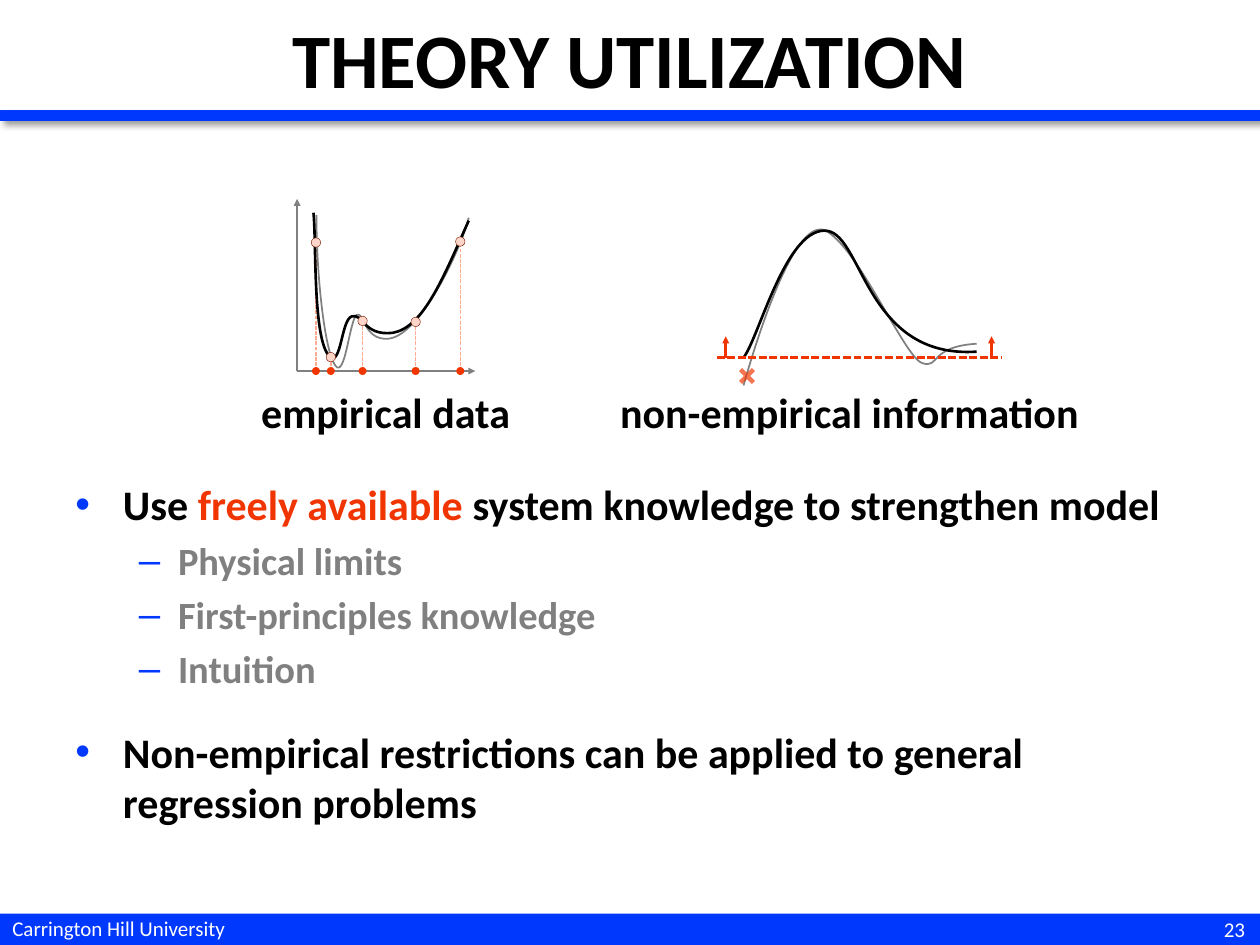
from dataclasses import dataclass
from pptx import Presentation
from pptx.dml.color import RGBColor as RGB
from pptx.enum.dml import MSO_LINE as DASH
from pptx.enum.shapes import MSO_CONNECTOR as CONN, MSO_SHAPE as SHAPE
from pptx.enum.text import MSO_ANCHOR as ANCHOR, PP_ALIGN as ALIGN
from pptx.oxml.ns import qn
from pptx.util import Cm, Pt
from lxml.etree import SubElement as Sub


@dataclass(frozen=True)
class Theme:
    font: str = "Calibri"
    blue: str = "0038FD"
    red: str = "F13500"
    salmon: str = "FFAB93"
    blush: str = "FFD5C9"
    brown: str = "781A00"
    gray: str = "808080"
    black: str = "000000"
    white: str = "FFFFFF"
    title: int = 44
    body: int = 24
    sub: int = 22
    footer: int = 12


def set_all(obj, values):
    for name, value in values.items():
        setattr(obj, name, value)


class SlideBuilder:
    def __init__(self, slide, theme):
        self.s, self.t = slide, theme
        self.shapes = slide.shapes

    def group(self):
        self.shapes = self.s.shapes.add_group_shape().shapes

    def ungroup(self):
        self.shapes = self.s.shapes

    def stroke(self, sp, color, width, dash=None):
        sp.line.color.rgb = RGB.from_string(color)
        set_all(sp.line, {"width": Pt(width), "dash_style": dash})

    def line(self, x1, y1, x2, y2, color, width, dash=None, arrow=False, shadow=False):
        sp = self.shapes.add_connector(CONN.STRAIGHT, Cm(x1), Cm(y1), Cm(x2), Cm(y2))
        self.stroke(sp, color, width, dash)
        if arrow:
            Sub(sp.line._get_or_add_ln(), qn("a:tailEnd"), type="triangle", w="sm", len="sm")
        effects = Sub(sp._element.spPr, qn("a:effectLst"))
        if shadow:
            outer = Sub(effects, qn("a:outerShdw"), blurRad=str(Pt(4)), dist=str(Pt(3)),
                        dir="2700000", algn="ctr", rotWithShape="0")
            black = Sub(outer, qn("a:srgbClr"), val=self.t.black)
            Sub(black, qn("a:alpha"), val="40000")

    def shape(self, kind, x, y, w, h, fill, border=None, alpha=None):
        sp = self.shapes.add_shape(kind, Cm(x), Cm(y), Cm(w), Cm(h))
        sp.shadow.inherit = False
        sp.fill.solid()
        sp.fill.fore_color.rgb = RGB.from_string(fill)
        if border:
            self.stroke(sp, border, 0.25)
        else:
            sp.line.fill.background()
        if alpha:
            color = sp._element.spPr.find(qn("a:solidFill"))[0]
            Sub(color, qn("a:alpha"), val=str(alpha * 1000))
        return sp

    def dot(self, cx, cy, d, fill, border=None):
        self.shape(SHAPE.OVAL, cx - d / 2, cy - d / 2, d, d, fill, border)

    def curve(self, points, color, width):
        start, *rest = [(Cm(x), Cm(y)) for x, y in points]
        fb = self.shapes.build_freeform(*start)
        fb.add_line_segments(rest, close=False)
        sp = fb.convert_to_shape()
        outline = next(sp._element.iter(qn("a:path")))
        segments = outline.findall(qn("a:lnTo"))
        for i in range(0, len(segments), 3):
            bezier = Sub(outline, qn("a:cubicBezTo"))
            for segment in segments[i:i + 3]:
                bezier.append(segment[0])
                outline.remove(segment)
        sp.shadow.inherit = False
        sp.fill.background()
        self.stroke(sp, color, width)

    def textbox(self, x, y, w, h, anchor=ANCHOR.TOP):
        tf = self.shapes.add_textbox(Cm(x), Cm(y), Cm(w), Cm(h)).text_frame
        set_all(tf, {"word_wrap": True, "vertical_anchor": anchor})
        return tf

    def runs(self, p, parts, size, bold=True):
        for text, color in parts:
            r = p.add_run()
            r.text = text
            set_all(r.font, {"name": self.t.font, "size": Pt(size), "bold": bold})
            r.font.color.rgb = RGB.from_string(color)

    def text(self, x, y, w, h, text, size, color, align=ALIGN.CENTER,
             bold=True, anchor=ANCHOR.TOP):
        p = self.textbox(x, y, w, h, anchor).paragraphs[0]
        p.alignment = align
        self.runs(p, [(text, color)], size, bold)

    def bullets(self, x, y, w, h, items):
        tf = self.textbox(x, y, w, h)
        for i, (level, before, parts) in enumerate(items):
            p = tf.add_paragraph() if i else tf.paragraphs[0]
            set_all(p, {"level": level, "space_before": Pt(before)})
            char, margin, hang, size = [("•", 0.96, 0.96, self.t.body),
                                        ("–", 2.07, 0.79, self.t.sub)][level]
            pPr = p._p.get_or_add_pPr()
            pPr.set("marL", str(Cm(margin)))
            pPr.set("indent", str(-Cm(hang)))
            Sub(Sub(pPr, qn("a:buClr")), qn("a:srgbClr"), val=self.t.blue)
            Sub(pPr, qn("a:buFont"), typeface="Arial")
            Sub(pPr, qn("a:buChar"), char=char)
            self.runs(p, parts, size)


def frame(b):
    t = b.t
    b.shape(SHAPE.RECTANGLE, 0, 18.42, 25.4, 0.63, t.blue)
    b.line(0, 2.33, 25.4, 2.33, t.blue, 6, shadow=True)
    b.text(23.29, 18.35, 2.06, 0.77, "23", t.footer, t.white, ALIGN.RIGHT, False, ANCHOR.MIDDLE)
    b.text(0, 18.33, 7.82, 0.77, "Carrington Hill University", t.footer, t.white,
           ALIGN.LEFT, False)
    b.text(0, 0, 25.4, 2.33, "THEORY UTILIZATION", t.title, t.black, anchor=ANCHOR.MIDDLE)


def empirical_plot(b):
    t = b.t
    left, base = 5.99, 7.48
    samples = [(6.37, 4.89), (6.67, 7.2), (7.31, 6.47), (8.38, 6.49), (9.28, 4.87)]
    truth = [(6.38, 4.34), (6.38, 5.59), (6.55, 7.09), (6.76, 7.37), (6.96, 7.65),
             (7.04, 6.48), (7.19, 6.35), (7.34, 6.25), (7.32, 6.86), (7.82, 6.83),
             (8.48, 6.78), (9.3, 5), (9.45, 4.39)]
    fit = [(6.32, 4.29), (6.38, 4.85), (6.3, 6.88), (6.65, 7.19), (6.88, 7.39),
           (6.88, 6.45), (7.09, 6.38), (7.32, 6.3), (7.32, 6.78), (7.92, 6.71),
           (8.53, 6.6), (8.92, 5.64), (9.45, 4.45)]
    b.group()
    for x, y in samples:
        b.line(x, base, x, y, t.salmon, 0.75, DASH.SQUARE_DOT)
    b.line(left, base, 9.58, base, t.gray, 1, arrow=True)
    b.curve(truth, t.gray, 1)
    b.curve(fit, t.black, 1.5)
    for x, y in samples:
        b.dot(x, y, 0.19, t.blush, t.brown)
    for x, _ in samples:
        b.dot(x, base, 0.16, t.red)
    b.line(left, base, left, 4.01, t.gray, 1, arrow=True)
    b.ungroup()


def limit_plot(b):
    t = b.t
    limit = 7.21
    truth = [(14.99, 7.77), (15.19, 7.06), (16, 4.34), (16.64, 4.65), (17.3, 4.98),
             (18.24, 7.21), (18.59, 7.32), (18.95, 7.44), (18.72, 6.99), (19.69, 6.93)]
    fit = [(14.99, 7.21), (15.29, 6.83), (15.82, 4.67), (16.61, 4.65),
           (17.4, 4.62), (17.4, 7.24), (19.69, 7.09)]
    b.group()
    b.curve(truth, t.gray, 1)
    b.curve(fit, t.black, 1.5)
    b.line(14.45, limit, 20.19, limit, t.red, 1.5, DASH.SQUARE_DOT)
    for x in (14.63, 19.99):
        b.line(x, limit, x, 6.78, t.red, 1.5, arrow=True)
    cross = b.shape(SHAPE.MATH_MULTIPLY, 14.81, 7.33, 0.5, 0.5, t.red, alpha=68)
    cross.adjustments[0] = 0.176
    b.ungroup()


def main():
    prs = Presentation()
    set_all(prs, {"slide_width": Cm(25.4), "slide_height": Cm(19.05)})
    t = Theme()
    b = SlideBuilder(prs.slides.add_slide(prs.slide_layouts[6]), t)
    frame(b)
    empirical_plot(b)
    limit_plot(b)
    for x, label in ((2.76, "empirical data"), (12.11, "non-empirical information")):
        b.text(x, 7.66, 10.03, 1.27, label, t.body, t.black)
    details = ["Physical limits", "First-principles knowledge", "Intuition"]
    b.bullets(1.27, 9.53, 22.86, 8.69, [
        (0, 4.8, [("Use", t.black), (" freely available ", t.red),
                  ("system knowledge to strengthen model", t.black)]),
        *[(1, 4.4, [(d, t.gray)]) for d in details],
        (0, 20.2, [("Non-empirical restrictions can be applied to general "
                    "regression problems", t.black)]),
    ])
    prs.save("out.pptx")


if __name__ == "__main__":
    main()
